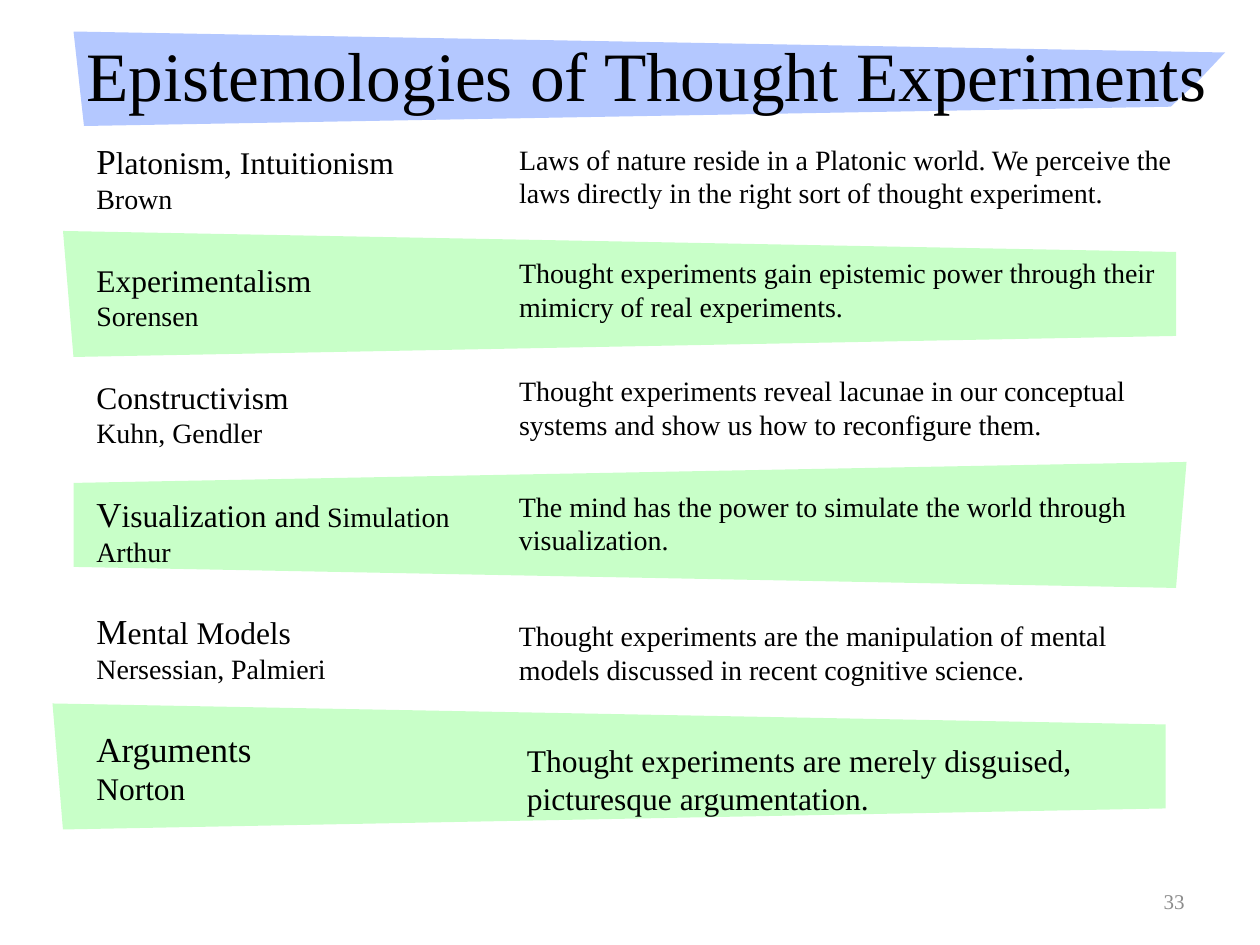
from pptx import Presentation
from pptx.dml.color import RGBColor
from pptx.enum.text import MSO_ANCHOR as ANCHOR, MSO_AUTO_SIZE as FIT, PP_ALIGN as ALIGN
from pptx.util import Pt

BLACK = RGBColor(0x00, 0x00, 0x00)
GRAY = RGBColor(0x8C, 0x8C, 0x8C)
BLUE = RGBColor(0xB4, 0xC8, 0xFF)
GREEN = RGBColor(0xC8, 0xFF, 0xC8)

TITLE_BAND = [(42, 18), (700.5, 29.5), (685, 46), (669, 61), (48, 72)]
STRIPE = [(0, 0), (636, 12), (636, 60), (6, 72)]
MIRRORED = [(642 - x, y) for x, y in STRIPE]

# Stripes: outline, left, top
STRIPES = [(STRIPE, 36, 132), (MIRRORED, 36, 264), (STRIPE, 30, 402)]

# Labels: top, width, height, wrap, lines of (text, size) runs
LABELS = [
    (76.3, 186.5, 51, False, [[("P", 20), ("latonism, Intuitionism", 18)], [("Brown", 16)]]),
    (145.4, 137.5, 48, False, [[("Experimentalism", 18)], [("Sorensen", 16)]]),
    (212.4, 124.5, 48, False, [[("Constructivism", 18)], [("Kuhn, Gendler", 16)]]),
    (278, 222, 50.5, True, [[("V", 20), ("isualization and", 18), (" Simulation", 16)],
                            [("Arthur", 16)]]),
    (345, 146, 50.5, False, [[("M", 20), ("ental Models", 18)],
                             [("Nersessian, Palmieri", 16)]]),
    (412, 105, 53, False, [[("Arguments", 20)], [("Norton", 18)]]),
]

# Descriptions: left, top, width, size, text
DESCRIPTIONS = [
    (289.5, 77.8, 408, 16, "Laws of nature reside in a Platonic world. We perceive the "
                           "laws directly in the right sort of thought experiment."),
    (289.5, 142.6, 408, 16, "Thought experiments gain epistemic power through their "
                            "mimicry of real experiments."),
    (289.5, 210, 408, 16, "Thought experiments reveal lacunae in our conceptual "
                          "systems and show us how to reconfigure them."),
    (289.5, 276, 371, 16, "The mind has the power to simulate the world through "
                          "visualization."),
    (289.5, 350, 374.5, 16, "Thought experiments are the manipulation of mental "
                            "models discussed in recent cognitive science."),
    (294, 420, 402, 18, "Thought experiments are merely disguised, "
                        "picturesque argumentation."),
]


class SlideBuilder:
    """Holds the text style and the current slide."""

    font = "Times New Roman"

    def __init__(self, s):
        self.s = s

    def fill_text(self, tf, lines, color=BLACK, align=ALIGN.LEFT, **frame):
        frame = {"word_wrap": True, "auto_size": FIT.NONE,
                 "vertical_anchor": ANCHOR.TOP, **frame}
        for name, value in frame.items():
            setattr(tf, name, value)
        for i, runs in enumerate(lines):
            p = tf.add_paragraph() if i else tf.paragraphs[0]
            p.alignment = align
            for text, size in runs:
                r = p.add_run()
                r.text = text
                for name, value in {"name": self.font, "size": Pt(size)}.items():
                    setattr(r.font, name, value)
                r.font.color.rgb = color

    def place(self, sp, left, top, width, height):
        box = {"left": left, "top": top, "width": width, "height": height}
        for name, value in box.items():
            setattr(sp, name, Pt(value))

    def title(self, text, size, *box):
        sp = self.s.shapes.title
        self.place(sp, *box)
        self.fill_text(sp.text_frame, [[(text, size)]], vertical_anchor=ANCHOR.MIDDLE)
        return sp

    def text(self, lines, *box, **style):
        sp = self.s.shapes.add_textbox(*map(Pt, box))
        self.fill_text(sp.text_frame, lines, **style)

    def polygon(self, points, color, left=0, top=0):
        points = [(x + left, y + top) for x, y in points]
        builder = self.s.shapes.build_freeform(*points[0], scale=Pt(1))
        builder.add_line_segments(points[1:], close=True)
        sp = builder.convert_to_shape()
        sp.shadow.inherit = False
        sp.fill.solid()
        sp.fill.fore_color.rgb = color
        sp.line.fill.background()
        return sp


def main():
    prs = Presentation()
    prs.slide_width, prs.slide_height = Pt(720), Pt(540)
    slide = SlideBuilder(prs.slides.add_slide(prs.slide_layouts[5]))

    # Title with its band behind it
    title = slide.title("Epistemologies of Thought Experiments", 39.6, 42, 18, 667.5, 48)
    band = slide.polygon(TITLE_BAND, BLUE)
    title.element.addprevious(band.element)

    # Stripes behind every second row
    for outline, left, top in STRIPES:
        slide.polygon(outline, GREEN, left, top)

    # Names of the positions and what they hold
    for top, width, height, wrap, lines in LABELS:
        slide.text(lines, 48, top, width, height, word_wrap=wrap,
                   auto_size=FIT.SHAPE_TO_FIT_TEXT)
    for left, top, width, size, text in DESCRIPTIONS:
        slide.text([[(text, size)]], left, top, width, 46,
                   auto_size=FIT.SHAPE_TO_FIT_TEXT)

    # Slide number
    slide.text([[("33", 12)]], 516, 500.5, 168, 28.75, color=GRAY, align=ALIGN.RIGHT,
               vertical_anchor=ANCHOR.MIDDLE)

    prs.save("out.pptx")


if __name__ == "__main__":
    main()
